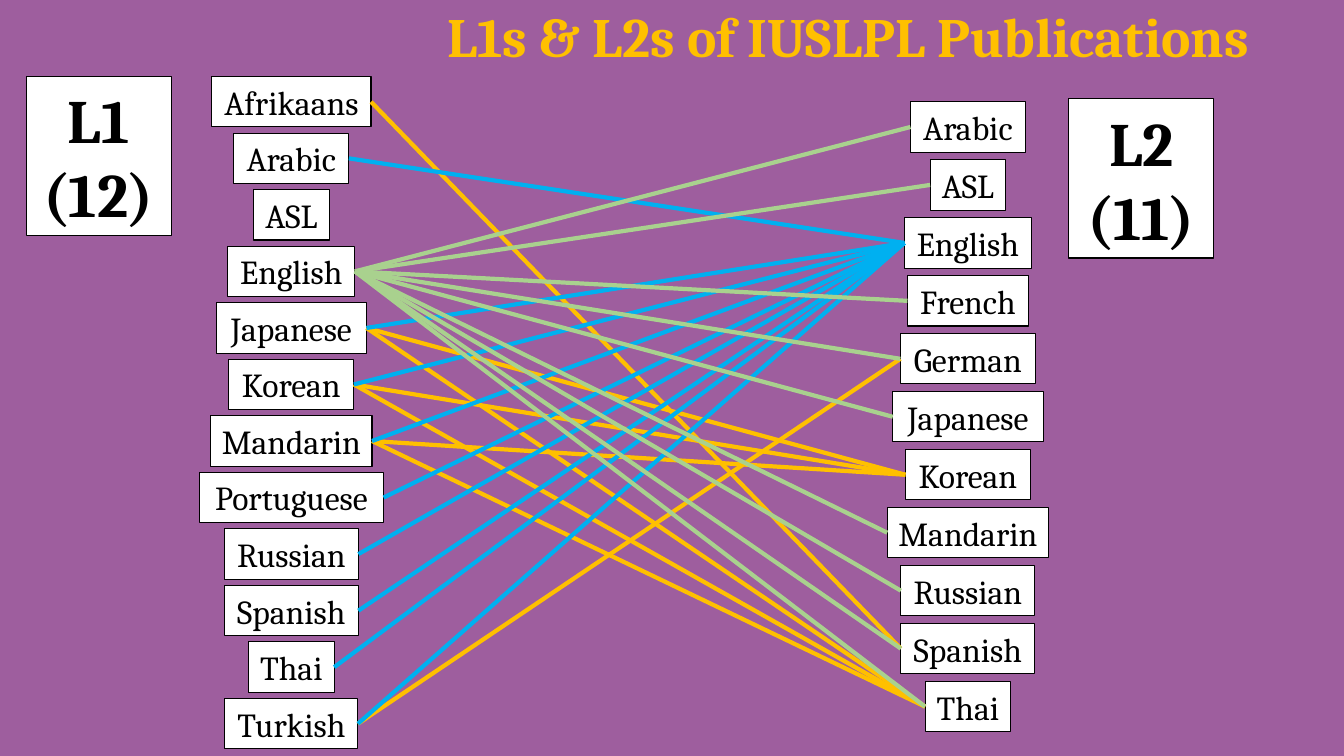
"""Build a slide linking the first and second languages of publications."""
from lxml import etree
from pptx import Presentation
from pptx import util as u
from pptx.dml.color import RGBColor
from pptx.enum import shapes, text
from pptx.oxml import ns

COLORS = {
    "background": "660066",
    "title": "FFC000",
    "box": "FFFFFF",
    "ink": "000000",
    "other": "FFC000",
    "to_english": "00B0F0",
    "from_english": "A9D18E",
}
FONT = "Cambria"
BOX_HEIGHT = 0.5
BOX_WIDTHS = {
    "Afrikaans": 1.58, "Arabic": 1.14, "ASL": 0.75, "English": 1.26,
    "French": 1.2, "German": 1.34, "Japanese": 1.49, "Korean": 1.24,
    "Mandarin": 1.6, "Portuguese": 1.83, "Russian": 1.33, "Spanish": 1.33,
    "Thai": 0.85, "Turkish": 1.32,
}
FIRST_LANGUAGES = [
    "Afrikaans", "Arabic", "ASL", "English", "Japanese", "Korean",
    "Mandarin", "Portuguese", "Russian", "Spanish", "Thai", "Turkish",
]
SECOND_LANGUAGES = [
    "Arabic", "ASL", "English", "French", "German", "Japanese",
    "Korean", "Mandarin", "Russian", "Spanish", "Thai",
]
LINKS = {
    "other": [
        ("Afrikaans", "Spanish"),
        ("Mandarin", "Korean"), ("Japanese", "Korean"), ("Korean", "Korean"),
        ("Mandarin", "Thai"), ("Japanese", "Thai"), ("Korean", "Thai"),
        ("Turkish", "German"),
    ],
    "to_english": [
        (language, "English") for language in FIRST_LANGUAGES
        if language not in ("Afrikaans", "ASL", "English")
    ],
    "from_english": [
        ("English", language) for language in SECOND_LANGUAGES
        if language not in ("English", "Korean")
    ],
}


def write(shape, content, size=24, color="ink", bold=False, spacing=None):
    """Fill a shape with centred lines of text."""
    frame = shape.text_frame
    frame.vertical_anchor = text.MSO_ANCHOR.MIDDLE
    frame.text = content
    for paragraph in frame.paragraphs:
        paragraph.alignment = text.PP_ALIGN.CENTER
        paragraph.line_spacing = spacing
        font = paragraph.runs[0].font
        font.name, font.size, font.bold = FONT, u.Pt(size), bold
        font.color.rgb = RGBColor.from_string(COLORS[color])


def add_box(slide, left, top, width, height, content, **text_format):
    """Add a white outlined box that fits its text."""
    shape = slide.shapes.add_shape(
        shapes.MSO_SHAPE.RECTANGLE,
        u.Inches(left), u.Inches(top), u.Inches(width), u.Inches(height))
    shape.shadow.inherit = False
    shape.fill.solid()
    shape.fill.fore_color.rgb = RGBColor.from_string(COLORS["box"])
    shape.line.color.rgb = RGBColor.from_string(COLORS["ink"])
    shape.line.width = u.Pt(0.75)
    write(shape, content, **text_format)
    shape.text_frame.word_wrap = False
    shape.text_frame.auto_size = text.MSO_AUTO_SIZE.SHAPE_TO_FIT_TEXT
    return shape


presentation = Presentation()
presentation.slide_width = u.Inches(13.33)
presentation.slide_height = u.Inches(7.5)
slide = presentation.slides.add_slide(presentation.slide_layouts[5])

background = slide.background.fill
background.solid()
background.fore_color.rgb = RGBColor.from_string(COLORS["background"])
background_color = slide.background._cSld.find(".//" + ns.qn("a:srgbClr"))
etree.SubElement(background_color, ns.qn("a:alpha"), val="63000")

title = slide.shapes.title
title.left, title.top = u.Inches(3.51), u.Inches(0.03)
title.width, title.height = u.Inches(9.8), u.Inches(0.73)
write(title, "L1s & L2s of IUSLPL Publications",
      size=39.6, color="title", bold=True, spacing=0.9)

columns = []
for languages, center, first_top, last_top in (
        (FIRST_LANGUAGES, 2.89, 0.76, 6.93),
        (SECOND_LANGUAGES, 9.6, 1.01, 6.76)):
    step = (last_top - first_top) / (len(languages) - 1)
    column = {}
    for row, language in enumerate(languages):
        width = BOX_WIDTHS[language]
        column[language] = add_box(
            slide, center - width / 2, first_top + row * step,
            width, BOX_HEIGHT, language)
    columns.append(column)
first_boxes, second_boxes = columns

for left, top, label in ((0.26, 0.76, "L1\n(12)"), (10.6, 0.98, "L2\n(11)")):
    add_box(slide, left, top, 1.44, 1.58, label, size=44, bold=True)

for kind, pairs in LINKS.items():
    group = slide.shapes.add_group_shape()
    for first, second in pairs:
        source, target = first_boxes[first], second_boxes[second]
        link = group.shapes.add_connector(
            shapes.MSO_CONNECTOR.STRAIGHT,
            source.left + source.width, source.top + source.height // 2,
            target.left, target.top + target.height // 2)
        link.begin_connect(source, 3)
        link.end_connect(target, 1)
        link.line.color.rgb = RGBColor.from_string(COLORS[kind])
        link.line.width = u.Pt(3)
        etree.SubElement(link._element.spPr, ns.qn("a:effectLst"))

presentation.save("out.pptx")
